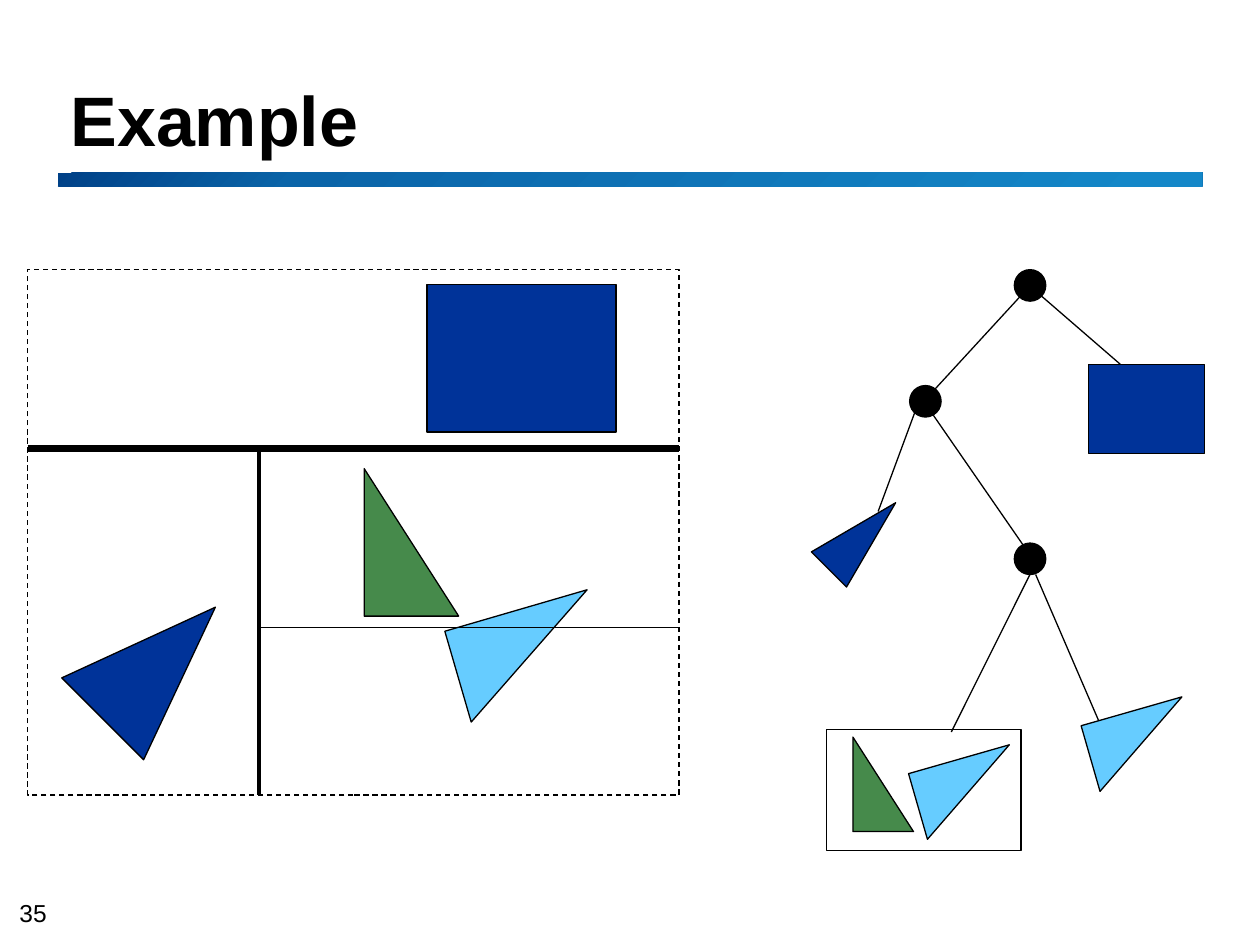
from copy import deepcopy
from typing import NamedTuple, Optional

from lxml.etree import SubElement
from pptx import Presentation
from pptx.dml.color import RGBColor
from pptx.enum.dml import MSO_LINE_DASH_STYLE as DASH
from pptx.enum.shapes import MSO_CONNECTOR, MSO_SHAPE
from pptx.enum.text import MSO_ANCHOR, PP_ALIGN
from pptx.oxml.ns import qn
from pptx.util import Pt

BLACK = RGBColor(0x00, 0x00, 0x00)
BLUE = RGBColor(0x00, 0x33, 0x99)
GREEN = RGBColor(0x46, 0x8A, 0x4B)
SKY = RGBColor(0x66, 0xCC, 0xFF)
BAR_STOPS = [
    (0, RGBColor(0x00, 0x41, 0x87)),
    (0.21, RGBColor(0x0A, 0x64, 0xA8)),
    (0.96, RGBColor(0x14, 0x87, 0xC8)),
]
FONT = "Arial"
THIN = 0.75
NODE_SIZE = 18


class Box(NamedTuple):
    left: float
    top: float
    width: float
    height: float
    fill: Optional[RGBColor] = None
    kind: MSO_SHAPE = MSO_SHAPE.RECTANGLE


class Triangle(NamedTuple):
    points: tuple
    fill: RGBColor

    def moved(self, dx: float, dy: float) -> "Triangle":
        return Triangle(tuple((x + dx, y + dy) for x, y in self.points), self.fill)


class Segment(NamedTuple):
    x1: float
    y1: float
    x2: float
    y2: float
    weight: float = THIN


def style(sp, fill: Optional[RGBColor]) -> None:
    sp.shadow.inherit = False
    if fill is None:
        sp.fill.background()
    else:
        sp.fill.solid()
        sp.fill.fore_color.rgb = fill
    sp.line.color.rgb = BLACK
    sp.line.width = Pt(THIN)


def draw_box(shapes, box: Box):
    sp = shapes.add_shape(box.kind, Pt(box.left), Pt(box.top), Pt(box.width), Pt(box.height))
    style(sp, box.fill)
    return sp


def draw_node(shapes, left: float, top: float) -> None:
    draw_box(shapes, Box(left, top, NODE_SIZE, NODE_SIZE, BLACK, MSO_SHAPE.OVAL))


def draw_triangle(shapes, tri: Triangle) -> None:
    first, *rest = [(Pt(x), Pt(y)) for x, y in tri.points]
    builder = shapes.build_freeform(*first, scale=1.0)
    builder.add_line_segments(rest, close=True)
    style(builder.convert_to_shape(), tri.fill)


def draw_segment(shapes, seg: Segment) -> None:
    line = shapes.add_connector(
        MSO_CONNECTOR.STRAIGHT, Pt(seg.x1), Pt(seg.y1), Pt(seg.x2), Pt(seg.y2))
    line.line.color.rgb = BLACK
    line.line.width = Pt(seg.weight)
    SubElement(line._element.spPr, qn("a:effectLst"))


def draw_bar(shapes) -> None:
    bar = draw_box(shapes, Box(33.1, 98.6, 653.8, 7.9, BLUE))
    bar.line.fill.background()
    bar.fill.gradient()
    bar.fill.gradient_angle = 315
    stop_list = bar._element.spPr.find(qn("a:gradFill")).find(qn("a:gsLst"))
    stop_list.append(deepcopy(stop_list[-1]))
    for stop, (position, color) in zip(bar.fill.gradient_stops, BAR_STOPS):
        stop.position = position
        stop.color.rgb = color


def format_text(sp, text: str, size: float, bold: bool = False) -> None:
    tf = sp.text_frame
    tf.text = text
    tf.vertical_anchor = MSO_ANCHOR.BOTTOM
    p = tf.paragraphs[0]
    p.alignment = PP_ALIGN.LEFT
    font = p.runs[0].font
    font.name, font.size, font.bold = FONT, Pt(size), bold
    font.color.rgb = BLACK


# Partitioned scene
SCENE_FRAME = Box(15.8, 154.1, 372.3, 300.2)
SCENE_SQUARE = Box(244.1, 162.7, 108, 84.2, BLUE)
SCENE_TRIANGLES = [
    Triangle(((123.1, 347), (82.1, 434.2), (35.3, 387.4)), BLUE),
    Triangle(((208.1, 267.8), (262.1, 352.1), (208.1, 352.1)), GREEN),
    Triangle(((335.5, 337), (269.3, 412.6), (254.2, 360.7)), SKY),
]
SPLITS = [
    Segment(15.8, 256.3, 388.1, 256.3, 4.5),
    Segment(147.9, 256.3, 147.9, 454.3, 2.25),
    Segment(147.9, 358.6, 388.1, 358.6),
]

# Tree of the partitions
NODES = [(579.6, 154.1), (519.8, 220.3), (579.6, 310.3)]
TREE_BOXES = [
    Box(622.1, 208.1, 66.2, 51.1, BLUE),
    Box(472.3, 416.9, 111.2, 69.1),
]
SKY_LEAF = Triangle(((675.4, 398.2), (628.6, 452.2), (617.8, 414.7)), SKY)
TREE_TRIANGLES = [
    Triangle(((511.9, 287.3), (483.8, 335.5), (463.7, 315.4)), BLUE),
    Triangle(((487.4, 421.2), (522, 475.2), (487.4, 475.2)), GREEN),
    SKY_LEAF,
    SKY_LEAF.moved(-98.6, 27.4),
]
EDGES = [
    Segment(591.8, 159.8, 525.6, 231.8),
    Segment(591.8, 166.3, 640.1, 208.1),
    Segment(526.3, 226.1, 501.8, 292.3),
    Segment(525.6, 226.1, 591.8, 321.8),
    Segment(591.8, 321.8, 543.6, 418.3),
    Segment(591.8, 328.3, 627.8, 411.8),
]


def main() -> None:
    prs = Presentation()
    prs.slide_width, prs.slide_height = Pt(720), Pt(540)
    s = prs.slides.add_slide(prs.slide_layouts[5])
    shapes = s.shapes

    # Title, bar and page number
    title = shapes.title
    title.left, title.top, title.width, title.height = Pt(33.1), Pt(23.8), Pt(652.3), Pt(71.3)
    format_text(title, "Example", 40, bold=True)
    title.text_frame.paragraphs[0].line_spacing = Pt(36)
    draw_bar(shapes)
    number = shapes.add_textbox(Pt(11.1), Pt(513.4), Pt(21), Pt(16.6))
    tf = number.text_frame
    tf.margin_left = tf.margin_right = tf.margin_top = tf.margin_bottom = 0
    format_text(number, "35", 14)

    # Scene on the left
    draw_box(shapes, SCENE_FRAME).line.dash_style = DASH.DASH
    draw_box(shapes, SCENE_SQUARE)
    for tri in SCENE_TRIANGLES:
        draw_triangle(shapes, tri)
    for split in SPLITS:
        draw_segment(shapes, split)

    # Tree on the right
    for left, top in NODES:
        draw_node(shapes, left, top)
    for box in TREE_BOXES:
        draw_box(shapes, box)
    for tri in TREE_TRIANGLES:
        draw_triangle(shapes, tri)
    for edge in EDGES:
        draw_segment(shapes, edge)

    prs.save("out.pptx")


if __name__ == "__main__":
    main()
